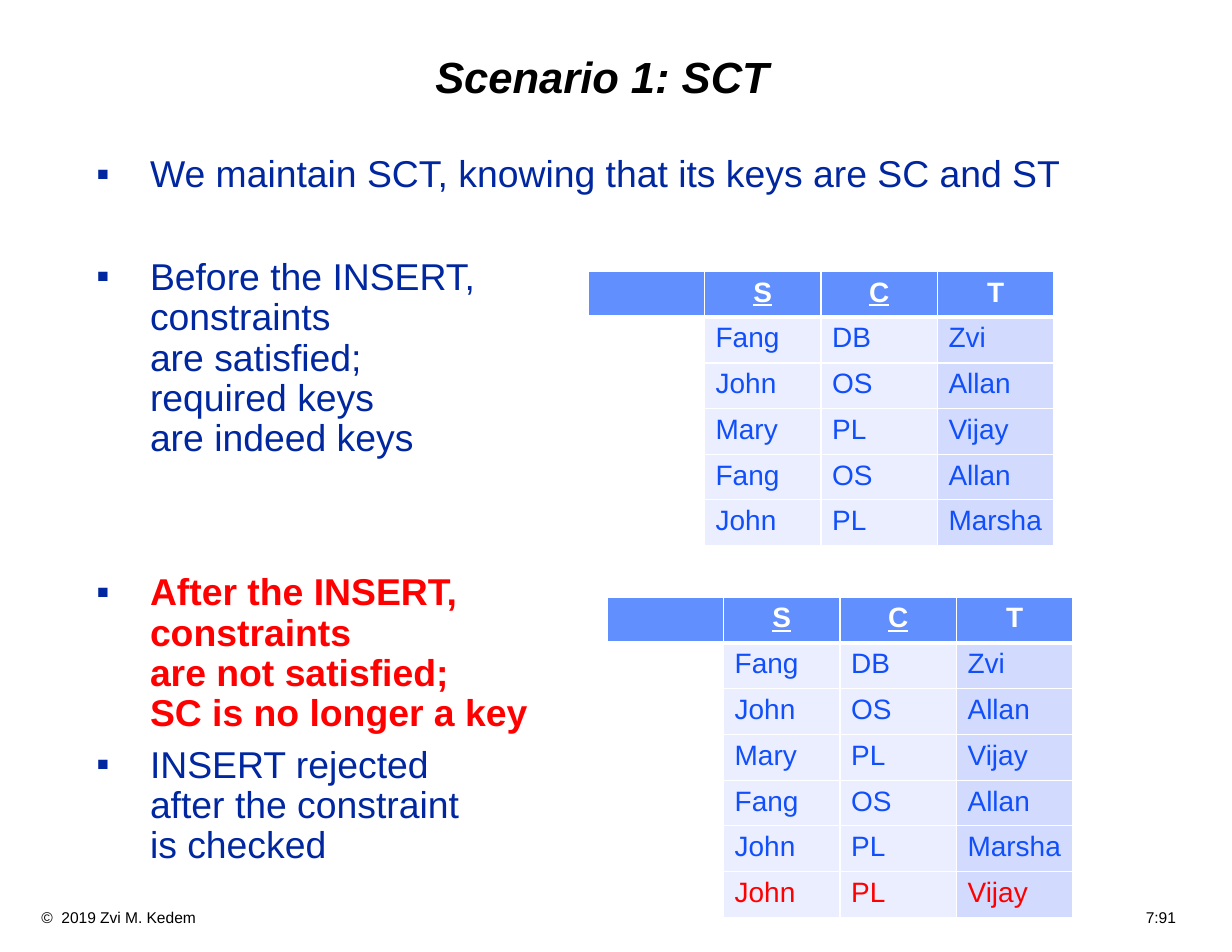
from lxml.etree import SubElement
from pptx import Presentation
from pptx.dml.color import RGBColor
from pptx.enum.text import MSO_ANCHOR as Anchor, PP_ALIGN as Align
from pptx.oxml.ns import qn
from pptx.util import Inches, Pt

COLORS = {
    "black": "000000", "white": "FFFFFF", "navy": "00279F", "red": "FF0000",
    "blue": "114FFB", "header": "618FFD", "pale": "EAEEFF", "last": "D2DBFE",
}
HEADINGS = ["S", "C", "T"]
KEY = {"S", "C"}
TUPLES = [
    ("Fang", "DB", "Zvi"),
    ("John", "OS", "Allan"),
    ("Mary", "PL", "Vijay"),
    ("Fang", "OS", "Allan"),
    ("John", "PL", "Marsha"),
]
INSERTED = ("John", "PL", "Vijay")
POINTS = [
    ("We maintain SCT, knowing that its keys are SC and ST", 7.2, False),
    ("Before the INSERT,\vconstraints\vare satisfied;\v"
     "required keys\vare indeed keys", 40, False),
    ("After the INSERT,\vconstraints\vare not satisfied;\v"
     "SC is no longer a key", 73.2, True),
    ("INSERT rejected\vafter the constraint\vis checked", 7.2, False),
]


def rgb(name):
    return RGBColor.from_string(COLORS[name])


def style(paragraph, size, color, bold=False, italic=False, underline=False):
    for run in paragraph.runs:
        font = run.font
        font.name, font.size = "Arial", Pt(size)
        font.bold, font.italic, font.underline = bold, italic, underline
        font.color.rgb = rgb(color)


def add_box(slide, left, top, width, height):
    frame = slide.shapes.add_textbox(
        Inches(left), Inches(top), Inches(width), Inches(height)).text_frame
    frame.word_wrap = True
    return frame


def add_footer(slide, credit, page):
    frame = add_box(slide, 0, 8.06, 11, 0.27)
    frame.margin_left = Inches(0.37)
    line = frame.paragraphs[0]
    line.text = f"{credit}\t{page}"
    style(line, 10, "black")
    tabs = SubElement(line._p.get_or_add_pPr(), qn("a:tabLst"))
    SubElement(tabs, qn("a:tab"), pos=str(Inches(10.13)), algn="r")


def add_title(slide, text):
    frame = add_box(slide, 0.75, 0.25, 9.25, 0.92)
    frame.vertical_anchor = Anchor.MIDDLE
    title = frame.paragraphs[0]
    title.text = text
    title.alignment = Align.CENTER
    title.line_spacing = 0.9
    style(title, 28, "black", bold=True, italic=True)


def add_bullet(paragraph):
    props = paragraph._p.get_or_add_pPr()
    props.set("marL", str(Inches(0.48)))
    props.set("indent", str(-Inches(0.48)))
    color = SubElement(props, qn("a:buClr"))
    SubElement(color, qn("a:srgbClr"), val=COLORS["navy"])
    SubElement(props, qn("a:buFont"), typeface="Arial")
    SubElement(props, qn("a:buChar"), char="▪")


def add_points(slide):
    frame = add_box(slide, 0.75, 1.33, 9.33, 6.67)
    frame.margin_left = frame.margin_right = Inches(0.11)
    frame.margin_top = frame.margin_bottom = Inches(0.06)
    for index, (text, gap, alarm) in enumerate(POINTS):
        point = frame.add_paragraph() if index else frame.paragraphs[0]
        point.text = text
        point.line_spacing = 0.9
        point.space_before = Pt(gap)
        style(point, 24, "red" if alarm else "navy", bold=alarm)
        add_bullet(point)


def set_borders(cell, top, bottom):
    props = cell._tc.get_or_add_tcPr()
    widths = {"a:lnL": 1, "a:lnR": 1, "a:lnT": top, "a:lnB": bottom}
    for position, (side, width) in enumerate(widths.items()):
        line = props.makeelement(qn(side), {"w": str(Pt(width))})
        fill = SubElement(line, qn("a:solidFill"))
        SubElement(fill, qn("a:srgbClr"), val=COLORS["white"])
        props.insert(position, line)


def fill_cell(cell, text, fill, color, heading):
    cell.fill.solid()
    cell.fill.fore_color.rgb = rgb(fill)
    entry = cell.text_frame.paragraphs[0]
    if text:
        entry.text = text
        style(entry, 18, color, bold=heading, underline=heading and text in KEY)
    entry.alignment = Align.CENTER if heading else Align.LEFT


def add_relation(slide, left, top, tuples):
    rows = [HEADINGS, *tuples]
    heights = [0.36 if r == 4 else 0.41 for r in range(len(rows))]
    table = slide.shapes.add_table(
        len(rows), 4, Inches(left), Inches(top),
        Inches(4 * 1.04), Inches(sum(heights))).table
    for column in table.columns:
        column.width = Inches(1.04)
    for r, (values, height) in enumerate(zip(rows, heights)):
        table.rows[r].height = Inches(height)
        color = "white" if r == 0 else "red" if values == INSERTED else "blue"
        for c, text in enumerate(["", *values]):
            fill = "header" if r == 0 else ["white", "pale", "pale", "last"][c]
            cell = table.cell(r, c)
            fill_cell(cell, text, fill, color, r == 0)
            set_borders(cell, 3 if r == 1 else 1, 3 if r == 0 else 1)


def main():
    deck = Presentation()
    deck.slide_width, deck.slide_height = Inches(11), Inches(8.5)
    slide = deck.slides.add_slide(deck.slide_layouts[6])
    add_footer(slide, "©  2019 Zvi M. Kedem", "7:91")
    add_title(slide, "Scenario 1: SCT")
    add_points(slide)
    add_relation(slide, 5.25, 2.42, TUPLES)
    add_relation(slide, 5.42, 5.33, [*TUPLES, INSERTED])
    deck.save("out.pptx")


if __name__ == "__main__":
    main()
